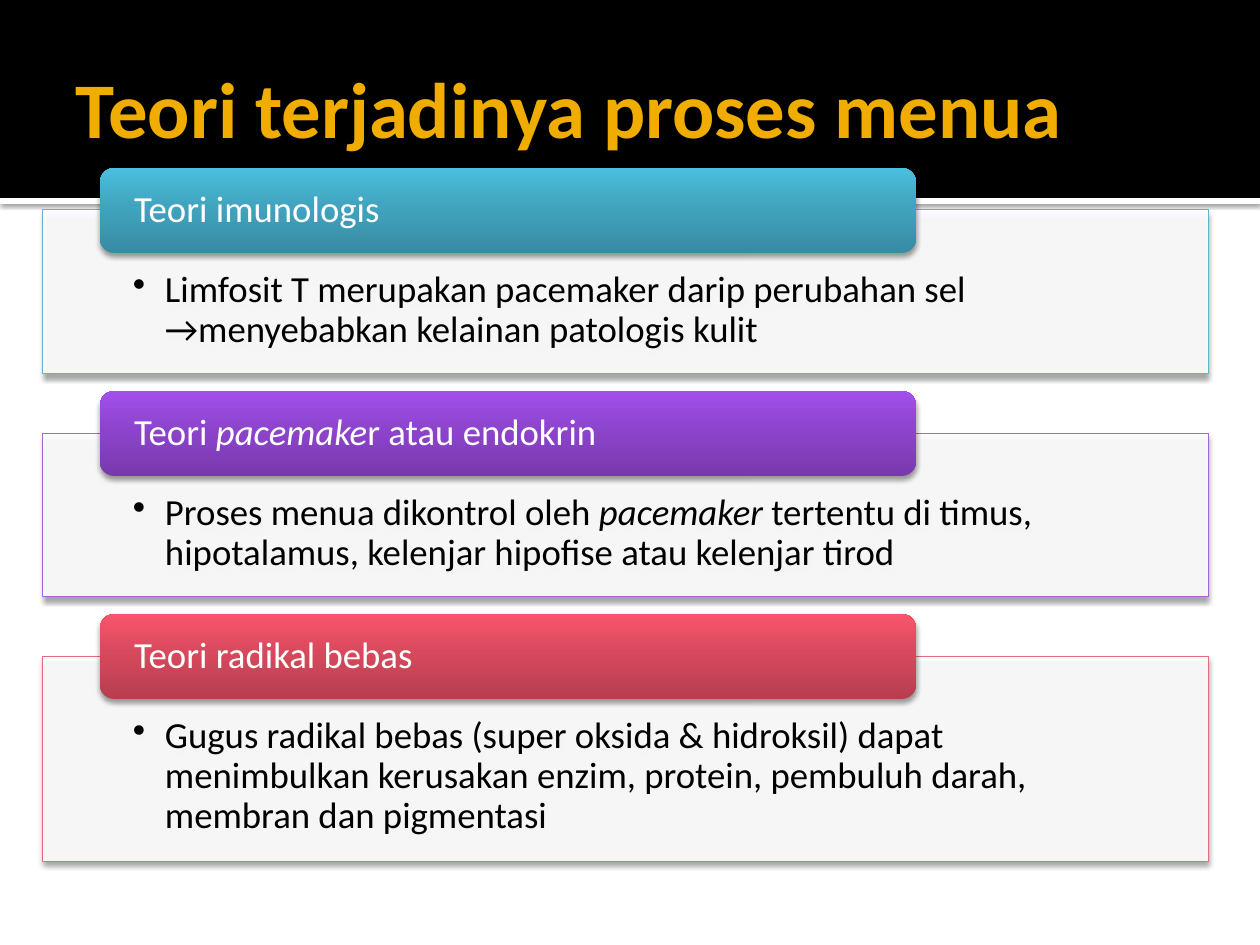
from lxml import etree
from pptx import Presentation
from pptx.dml.color import RGBColor
from pptx.enum import shapes, text
from pptx.oxml.ns import qn
from pptx.util import Pt

# Content: heading and body are lists of (words, italic) runs
TITLE = [("Teori terjadinya proses menua", False)]
THEORIES = [
    dict(heading=[("Teori imunologis", False)],
         body=[("Limfosit T merupakan pacemaker darip perubahan sel "
                "→menyebabkan kelainan patologis kulit", False)],
         height=164, edge=RGBColor(0x60, 0xB5, 0xCC),
         shades=("378BA2", "41A4BF", "4BBFDE")),
    dict(heading=[("Teori ", False), ("pacemake", True), ("r atau endokrin", False)],
         body=[("Proses menua dikontrol oleh", False), (" pacemaker ", True),
               ("tertentu di timus, hipotalamus, kelenjar hipofise "
                "atau kelenjar tirod", False)],
         height=164, edge=RGBColor(0xA4, 0x65, 0xDA),
         shades=("7839AD", "8D44CC", "A44FED")),
    dict(heading=[("Teori radikal bebas", False)],
         body=[("Gugus radikal bebas (super oksida & hidroksil) dapat menimbulkan "
                "kerusakan enzim, protein, pembuluh darah, membran dan pigmentasi", False)],
         height=205, edge=RGBColor(0xE6, 0x6C, 0x7D),
         shades=("B73E4F", "D7495D", "FA556C")),
]

BLACK = RGBColor(0, 0, 0)
WHITE = RGBColor(255, 255, 255)
GOLD = RGBColor(0xF0, 0xAD, 0x00)
FONT = "Calibri"
SHADE_STOPS = (0, 55, 100)

# Layout in px
SLIDE_W, SLIDE_H = 1260, 945
BAND_H, STRIP_H = 198, 6
PANEL_X, PANEL_W, FIRST_PANEL_Y, PANEL_GAP = 42, 1166, 210, 59
TAB_X, TAB_W, TAB_H, TAB_RISE = 100, 816, 85, 42


def px(n):
    return round(n * 914400 / 126)


def add(parent, tag, **attrs):
    return etree.SubElement(parent, qn(tag), {k: str(v) for k, v in attrs.items()})


def write(shape, runs, *, size, color, insets, bold=None, spacing=None,
          anchor=text.MSO_ANCHOR.MIDDLE, bullet=False):
    frame = shape.text_frame
    frame.word_wrap = True
    frame.auto_size = text.MSO_AUTO_SIZE.NONE
    frame.vertical_anchor = anchor
    (frame.margin_left, frame.margin_top,
     frame.margin_right, frame.margin_bottom) = map(px, insets)
    para = frame.paragraphs[0]
    para.alignment = text.PP_ALIGN.LEFT
    para.line_spacing = spacing
    if bullet:
        props = para._p.get_or_add_pPr()
        props.set("marL", str(px(32)))
        props.set("indent", str(-px(32)))
        add(props, "a:buChar", char="•")
    for words, italic in runs:
        run = para.add_run()
        run.text = words
        font = run.font
        font.name, font.size, font.bold, font.italic = FONT, Pt(size), bold, italic
        font.color.rgb = color


def add_box(kind, x, y, w, h, *, fill=None, edge=None):
    box = slide.shapes.add_shape(kind, px(x), px(y), px(w), px(h))
    if fill is not None:
        box.fill.solid()
        box.fill.fore_color.rgb = fill
    if edge is None:
        box.line.fill.background()
    else:
        box.line.color.rgb = edge
        box.line.width = Pt(0.5)
    box.shadow.inherit = False
    return box


def cast_shadow(box, alpha=38, blur=3.1, distance=2):
    effects = box._element.spPr.find(qn("a:effectLst"))
    shadow = add(effects, "a:outerShdw", blurRad=Pt(blur), dist=Pt(distance),
                 dir=90 * 60000, rotWithShape=0)
    add(add(shadow, "a:srgbClr", val="000000"), "a:alpha", val=alpha * 1000)


def shade(box, colors):
    box.fill.gradient()
    box.fill.gradient_angle = 90
    stops = box._element.spPr.find(".//" + qn("a:gsLst"))
    for stop in list(stops):
        stops.remove(stop)
    for pos, color in zip(SHADE_STOPS, colors):
        add(add(stops, "a:gs", pos=pos * 1000), "a:srgbClr", val=color)


prs = Presentation()
prs.slide_width, prs.slide_height = px(SLIDE_W), px(SLIDE_H)
slide = prs.slides.add_slide(prs.slide_layouts[5])
RECT = shapes.MSO_SHAPE.RECTANGLE
ROUNDED = shapes.MSO_SHAPE.ROUNDED_RECTANGLE

# Header band and white strip, behind the title
strip = add_box(RECT, 0, BAND_H, SLIDE_W, STRIP_H, fill=WHITE)
cast_shadow(strip, alpha=60, blur=2.5, distance=0.8)
band = add_box(RECT, 0, 0, SLIDE_W, BAND_H, fill=BLACK)
for backdrop in (band, strip):
    slide.shapes._spTree.insert(2, backdrop._element)

# Title
title = slide.shapes.title
title.left, title.top, title.width, title.height = map(px, (63, 21, 1134, 173))
write(title, TITLE, size=45, color=GOLD, bold=True, insets=(13, 6, 6, 6))

# Theory panels, each with a tab over its top edge
y = FIRST_PANEL_Y
for theory in THEORIES:
    panel = add_box(RECT, PANEL_X, y, PANEL_W, theory["height"],
                    fill=WHITE, edge=theory["edge"])
    panel_color = panel._element.spPr.find(qn("a:solidFill")).find(qn("a:srgbClr"))
    add(panel_color, "a:alpha", val=90000)
    cast_shadow(panel)
    write(panel, theory["body"], size=21, color=BLACK, spacing=0.9, bullet=True,
          anchor=text.MSO_ANCHOR.TOP, insets=(91, 61, 91, 20))

    tab = add_box(ROUNDED, TAB_X, y - TAB_RISE, TAB_W, TAB_H)
    shade(tab, theory["shades"])
    cast_shadow(tab)
    write(tab, theory["heading"], size=21, color=WHITE, spacing=0.9,
          insets=(30, 0, 30, 0))
    y += theory["height"] + PANEL_GAP

prs.save("out.pptx")
